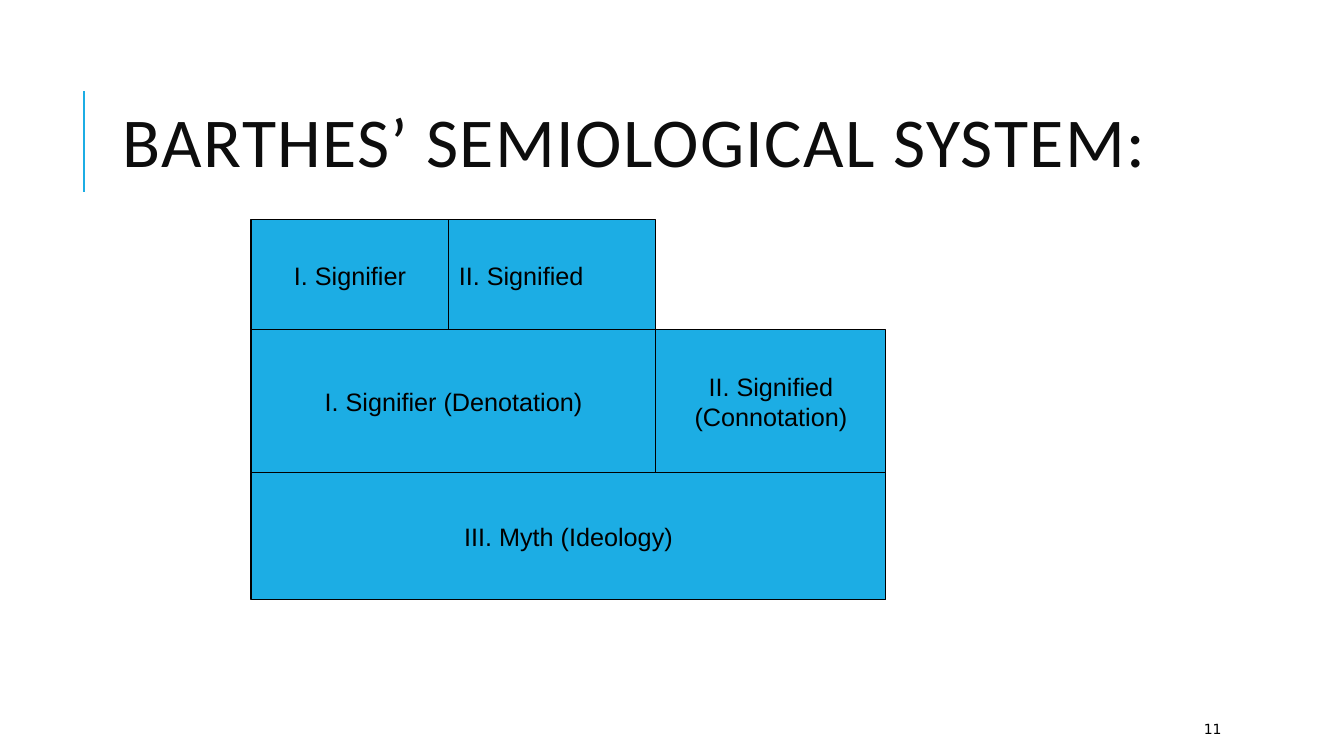
from pptx import Presentation
from pptx.dml.color import RGBColor
from pptx.enum.shapes import MSO_CONNECTOR, MSO_SHAPE
from pptx.enum.text import MSO_ANCHOR, PP_ALIGN
from pptx.oxml.ns import qn
from pptx.util import Emu, Pt
from lxml import etree

STRAIGHT = MSO_CONNECTOR.STRAIGHT
RECTANGLE = MSO_SHAPE.RECTANGLE
MIDDLE = MSO_ANCHOR.MIDDLE
LEFT, CENTER = PP_ALIGN.LEFT, PP_ALIGN.CENTER
EMU_PER_PX = 12192000 / 1344


def px(length):
    """Turn whole pixels into EMU."""
    return Emu(round(length * EMU_PER_PX))


def color(hex_string):
    """Turn a hex string into a colour."""
    return RGBColor.from_string(hex_string)


class SlideBuilder:
    """Hold the style and the current slide."""

    BLUE, BLACK, TITLE = "1CADE4", "000000", "0D0D0D"
    BOX_FONT = {"name": "Arial", "size": Pt(18)}
    TITLE_FONT = {"name": "Calibri", "size": Pt(50)}
    NUMBER_FONT = {"name": "DejaVu Sans", "size": Pt(10)}

    def __init__(self, presentation):
        """Add a blank slide."""
        self.slide = presentation.slides.add_slide(presentation.slide_layouts[6])

    def fill_text(self, shape, lines, font, hex_string, wrap=True, **paragraph_format):
        """Put one paragraph per line into a shape."""
        frame = shape.text_frame
        for name, value in {"word_wrap": wrap, "vertical_anchor": MIDDLE}.items():
            setattr(frame, name, value)
        frame.text = "\n".join(lines)
        for paragraph in frame.paragraphs:
            for name, value in paragraph_format.items():
                setattr(paragraph, name, value)
            for run in paragraph.runs:
                for name, value in font.items():
                    setattr(run.font, name, value)
                run.font.color.rgb = color(hex_string)

    def text(self, box, content, font, hex_string, **paragraph_format):
        """Add a text box and return it."""
        shape = self.slide.shapes.add_textbox(*map(px, box))
        self.fill_text(shape, [content], font, hex_string, **paragraph_format)
        return shape

    def title(self, box, content):
        """Add the title with widened letter spacing."""
        shape = self.text(box, content, self.TITLE_FONT, self.TITLE, line_spacing=0.8)
        for properties in shape.element.iter(qn("a:rPr")):
            properties.set("spc", "100")

    def rule(self, x, top, bottom):
        """Add the vertical accent line."""
        line = self.slide.shapes.add_connector(STRAIGHT, px(x), px(bottom), px(x), px(top))
        line.line.color.rgb = color(self.BLUE)
        line.line.width = Pt(1.5)
        etree.SubElement(line.element.spPr, qn("a:effectLst"))

    def block(self, left, top, right, bottom, lines, alignment):
        """Add a labelled block between four edges."""
        shape = self.slide.shapes.add_shape(
            RECTANGLE, *map(px, (left, top, right - left, bottom - top)))
        shape.shadow.inherit = False
        shape.fill.solid()
        shape.fill.fore_color.rgb = color(self.BLUE)
        shape.line.color.rgb = color(self.BLACK)
        shape.line.width = Pt(0.75)
        self.fill_text(shape, lines, self.BOX_FONT, self.BLACK, wrap=False, alignment=alignment)


def main():
    """Build the slide and save it."""
    presentation = Presentation()
    presentation.slide_width, presentation.slide_height = px(1344), px(756)
    builder = SlideBuilder(presentation)
    builder.rule(84, 91, 192)
    builder.title((113, 65, 1072, 165), "BARTHES’ SEMIOLOGICAL SYSTEM:")
    builder.text((1194, 714, 107, 30), "11", builder.NUMBER_FONT, builder.BLACK)

    columns = (251, 449, 656, 886)
    rows = (220, 330, 473, 600)
    blocks = [
        (0, 0, 1, ["I. Signifier"], CENTER),
        (0, 1, 2, ["II. Signified"], LEFT),
        (1, 0, 2, ["I. Signifier (Denotation)"], CENTER),
        (1, 2, 3, ["II. Signified", "(Connotation)"], CENTER),
        (2, 0, 3, ["III. Myth (Ideology)"], CENTER),
    ]
    for row, first, last, lines, alignment in blocks:
        builder.block(columns[first], rows[row], columns[last], rows[row + 1], lines, alignment)
    presentation.save("out.pptx")


if __name__ == "__main__":
    main()
